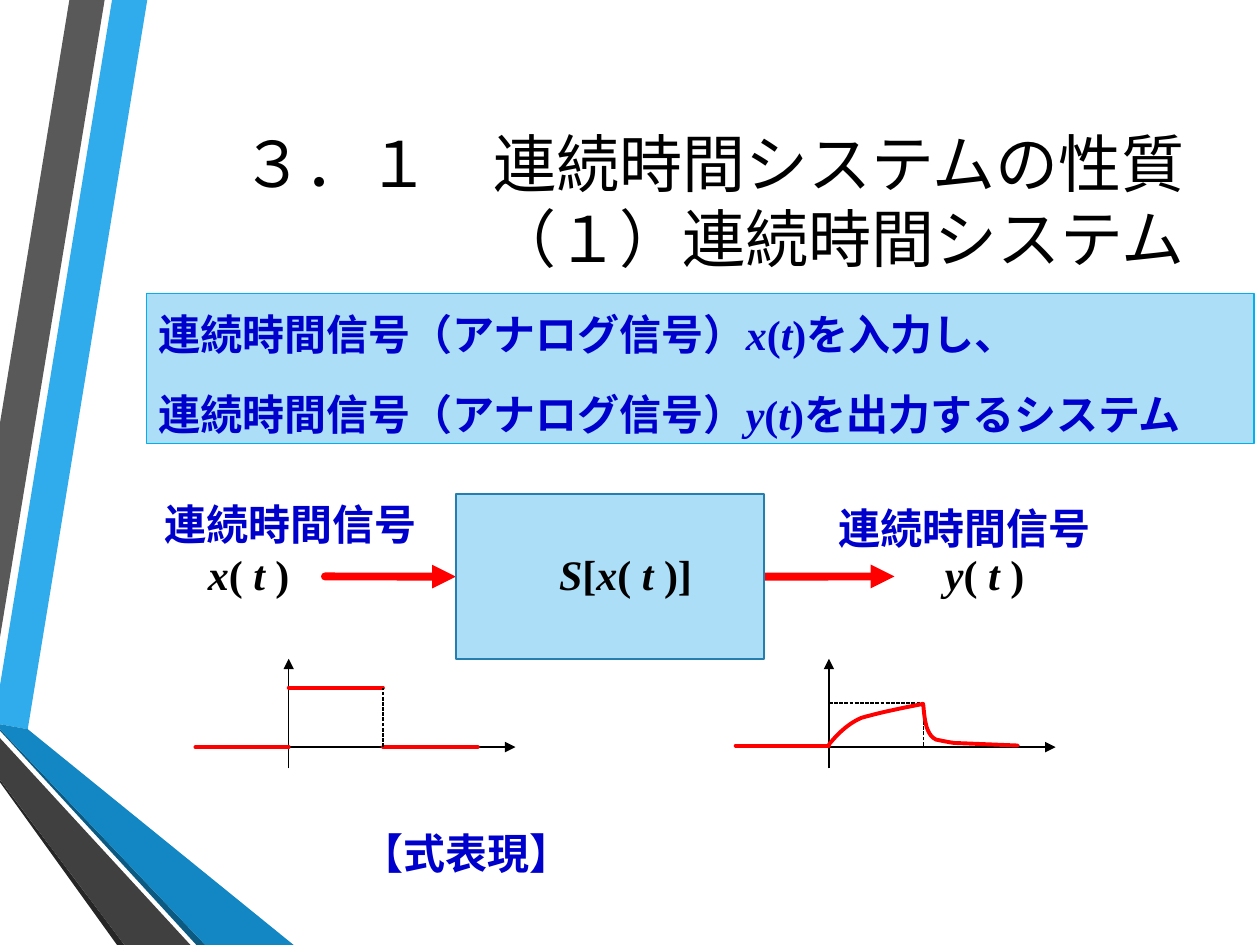
from lxml.etree import SubElement
from pptx import Presentation
from pptx.dml.color import RGBColor
from pptx.enum.dml import MSO_LINE_DASH_STYLE as Dash
from pptx.enum.shapes import MSO_CONNECTOR as Connector, MSO_SHAPE as Shape
from pptx.enum.text import MSO_ANCHOR as Anchor, PP_ALIGN as Align
from pptx.oxml.ns import qn
from pptx.util import Cm, Pt

BLACK = RGBColor(0x00, 0x00, 0x00)
RED = RGBColor(0xFF, 0x00, 0x00)
NAVY = RGBColor(0x00, 0x00, 0xCC)
PALE_BLUE = RGBColor(0xAC, 0xDE, 0xF7)
PANEL_EDGE = RGBColor(0x00, 0xB0, 0xF0)
BLOCK_EDGE = RGBColor(0x24, 0x7F, 0xAF)
SKY = RGBColor(0x30, 0xAC, 0xEC)
GREY = RGBColor(0x59, 0x59, 0x59)
SHADE = RGBColor(0x26, 0x26, 0x26)
DEEP_BLUE = RGBColor(0x0C, 0x5A, 0x82)
BLUE = RGBColor(0x12, 0x87, 0xC3)
CHARCOAL = RGBColor(0x40, 0x40, 0x40)

SYMBOLS = {"x", "y", "t", "S"}
RIBBONS = [
    (SKY, [(0, 13.82), (0, 14.6), (0.56, 14.7), (2.97, 0), (2.26, 0)]),
    (GREY, [(2.11, 0), (1.4, 0), (0, 8.53), (0, 12.85)]),
    (SHADE, [(0, 15.72), (0, 15.77), (2.36, 19.05), (2.51, 19.05)]),
    (DEEP_BLUE, [(0, 14.7), (0, 14.73), (3.96, 19.05), (4.14, 19.05)]),
    (BLUE, [(0, 14.7), (4.14, 19.05), (5.92, 19.05), (0.56, 14.7), (0, 14.6)]),
    (CHARCOAL, [(0, 15.72), (2.51, 19.05), (3.84, 19.05), (0, 14.88)]),
]
RESPONSE_START = (1.88, 1.73)
RESPONSE_CURVES = [
    ((2.03, 1.55), (2.24, 1.32), (2.54, 1.19)),
    ((2.97, 1.07), (3.38, 0.99), (3.78, 0.91)),
    ((3.81, 1.14), (3.81, 1.52), (4.04, 1.63)),
    ((4.14, 1.65), (4.37, 1.7), (4.44, 1.7)),
]
RESPONSE_END = (5.69, 1.75)


def write_lines(frame, lines, color):
    frame.word_wrap = True
    frame.vertical_anchor = Anchor.TOP
    for index, pieces in enumerate(lines):
        line = frame.paragraphs[0] if index == 0 else frame.add_paragraph()
        line.alignment = Align.LEFT
        line.line_spacing = Pt(33.6)
        line.space_before = line.space_after = Pt(6)
        line.font.name = "Times New Roman"
        line.font.size = Pt(24)
        line.font.bold = True
        line.font.color.rgb = color
        for piece in pieces:
            run = line.add_run()
            run.text = piece
            run.font.italic = piece.strip() in SYMBOLS


def add_label(slide, left, top, width, pieces, color=NAVY):
    label = slide.shapes.add_textbox(Cm(left), Cm(top), Cm(width), Cm(1.3))
    write_lines(label.text_frame, [pieces], color)


def add_panel(slide, left, top, width, height, edge, weight):
    panel = slide.shapes.add_shape(Shape.RECTANGLE, Cm(left), Cm(top), Cm(width), Cm(height))
    panel.shadow.inherit = False
    panel.fill.solid()
    panel.fill.fore_color.rgb = PALE_BLUE
    panel.line.color.rgb = edge
    panel.line.width = Pt(weight)
    return panel


def add_line(slide, start, end, color, weight, arrow=False, dashed=False):
    line = slide.shapes.add_connector(Connector.STRAIGHT, *(Cm(v) for v in (*start, *end)))
    line.line.color.rgb = color
    line.line.width = Pt(weight)
    if dashed:
        line.line.dash_style = Dash.SQUARE_DOT
    outline = line.line._get_or_add_ln()
    if color == RED:
        outline.set("cap", "rnd")
    if arrow:
        SubElement(outline, qn("a:tailEnd"), type="triangle")
    SubElement(line._element.spPr, qn("a:effectLst"))
    return line


def add_outline(slide, points, close):
    start, *rest = [(Cm(x), Cm(y)) for x, y in points]
    builder = slide.shapes.build_freeform(*start)
    builder.add_line_segments(rest, close=close)
    outline = builder.convert_to_shape()
    outline.shadow.inherit = False
    return outline


def add_ribbons(slide, left, top):
    for color, points in RIBBONS:
        ribbon = add_outline(slide, [(left + x, top + y) for x, y in points], True)
        ribbon.fill.solid()
        ribbon.fill.fore_color.rgb = color
        ribbon.line.fill.background()


def add_title(slide, left, top, width, height):
    title = slide.shapes.add_textbox(Cm(left), Cm(top), Cm(width), Cm(height))
    frame = title.text_frame
    frame.word_wrap = True
    frame.vertical_anchor = Anchor.MIDDLE
    heading = frame.paragraphs[0]
    heading.alignment = Align.RIGHT
    heading.font.name = "Cabin"
    heading.font.size = Pt(36)
    heading.font.color.rgb = BLACK
    heading.add_run().text = "３．１　連続時間システムの性質"
    heading.add_line_break()
    heading.add_run().text = "（１）連続時間システム"


def add_definition(slide, left, top, width, height):
    panel = add_panel(slide, left, top, width, height, PANEL_EDGE, 0.75)
    signal = "連続時間信号（アナログ信号）"
    write_lines(panel.text_frame, [
        [signal, "x", "(", "t", ")を入力し、"],
        [signal, "y", "(", "t", ")を出力するシステム"],
    ], NAVY)


def add_system(slide, left, top):
    formula_top = top + 1.02
    middle = top + 1.87
    add_label(slide, left, top, 6.12, ["連続時間信号"])
    add_label(slide, left + 0.87, formula_top, 2.82, ["x", "( ", "t ", ")"], BLACK)
    add_label(slide, left + 13.59, top + 0.08, 6.12, ["連続時間信号"])
    add_label(slide, left + 15.73, formula_top, 2.92, ["y", "( ", "t ", ")"], BLACK)

    block_left, block_width = left + 6.12, 6.22
    block_right = block_left + block_width
    inflow = add_line(slide, (left + 3.48, middle), (block_left, middle), RED, 4.5, arrow=True)
    outflow = add_line(slide, (block_right, middle), (left + 14.96, middle), RED, 4.5, arrow=True)
    block = add_panel(slide, block_left, top + 0.21, block_width, 3.33, BLOCK_EDGE, 1.25)
    inflow.end_connect(block, 1)
    outflow.begin_connect(block, 3)
    add_label(slide, left + 7.95, formula_top, 3.2, ["S", "[", "x", "( ", "t ", ")]"], BLACK)


def add_axes(slide, left, top):
    add_line(slide, (left, top + 1.78), (left + 6.45, top + 1.78), BLACK, 0.75, arrow=True)
    add_line(slide, (left + 1.88, top + 2.21), (left + 1.88, top), BLACK, 0.75, arrow=True)


def add_input_plot(slide, left, top):
    add_axes(slide, left, top)
    rise, fall, end = left + 1.88, left + 3.78, left + 5.69
    base, level = top + 1.78, top + 0.58
    add_line(slide, (left, base), (rise, base), RED, 2.25)
    add_line(slide, (rise, level), (fall, level), RED, 2.25)
    add_line(slide, (fall, base), (end, base), RED, 2.25)
    add_line(slide, (fall, base), (fall, level), BLACK, 0.75, dashed=True)


def bezier_points(start, curves, steps=12):
    points = [start]
    for first, second, end in curves:
        corners = (points[-1], first, second, end)
        for step in range(1, steps + 1):
            t = step / steps
            weights = ((1 - t) ** 3, 3 * t * (1 - t) ** 2, 3 * t * t * (1 - t), t ** 3)
            points.append(tuple(sum(w * c[axis] for w, c in zip(weights, corners))
                                for axis in (0, 1)))
    return points


def add_output_plot(slide, left, top):
    add_axes(slide, left, top)
    rise, fall = left + 1.88, left + 3.78
    base, level = top + 1.75, top + 0.89
    add_line(slide, (left, base), (rise, base), RED, 2.25)
    add_line(slide, (rise, level), (fall, level), BLACK, 0.75, dashed=True)
    add_line(slide, (fall, base), (fall, level), BLACK, 0.75, dashed=True)
    points = bezier_points(RESPONSE_START, RESPONSE_CURVES) + [RESPONSE_END]
    response = add_outline(slide, [(left + x, top + y) for x, y in points], False)
    response.fill.background()
    response.line.color.rgb = RED
    response.line.width = Pt(2.25)
    response.line._get_or_add_ln().set("cap", "rnd")


def main():
    deck = Presentation()
    deck.slide_width, deck.slide_height = Cm(25.4), Cm(19.05)
    slide = deck.slides.add_slide(deck.slide_layouts[6])
    add_ribbons(slide, 0, 0)
    add_title(slide, 2.72, 1.27, 21.41, 5.51)
    add_definition(slide, 2.95, 5.92, 22.33, 3.02)
    add_system(slide, 3.07, 9.75)
    add_input_plot(slide, 3.94, 13.28)
    add_output_plot(slide, 14.83, 13.28)
    add_label(slide, 7.04, 16.38, 6.12, ["【式表現】"])
    deck.save("out.pptx")


if __name__ == "__main__":
    main()
